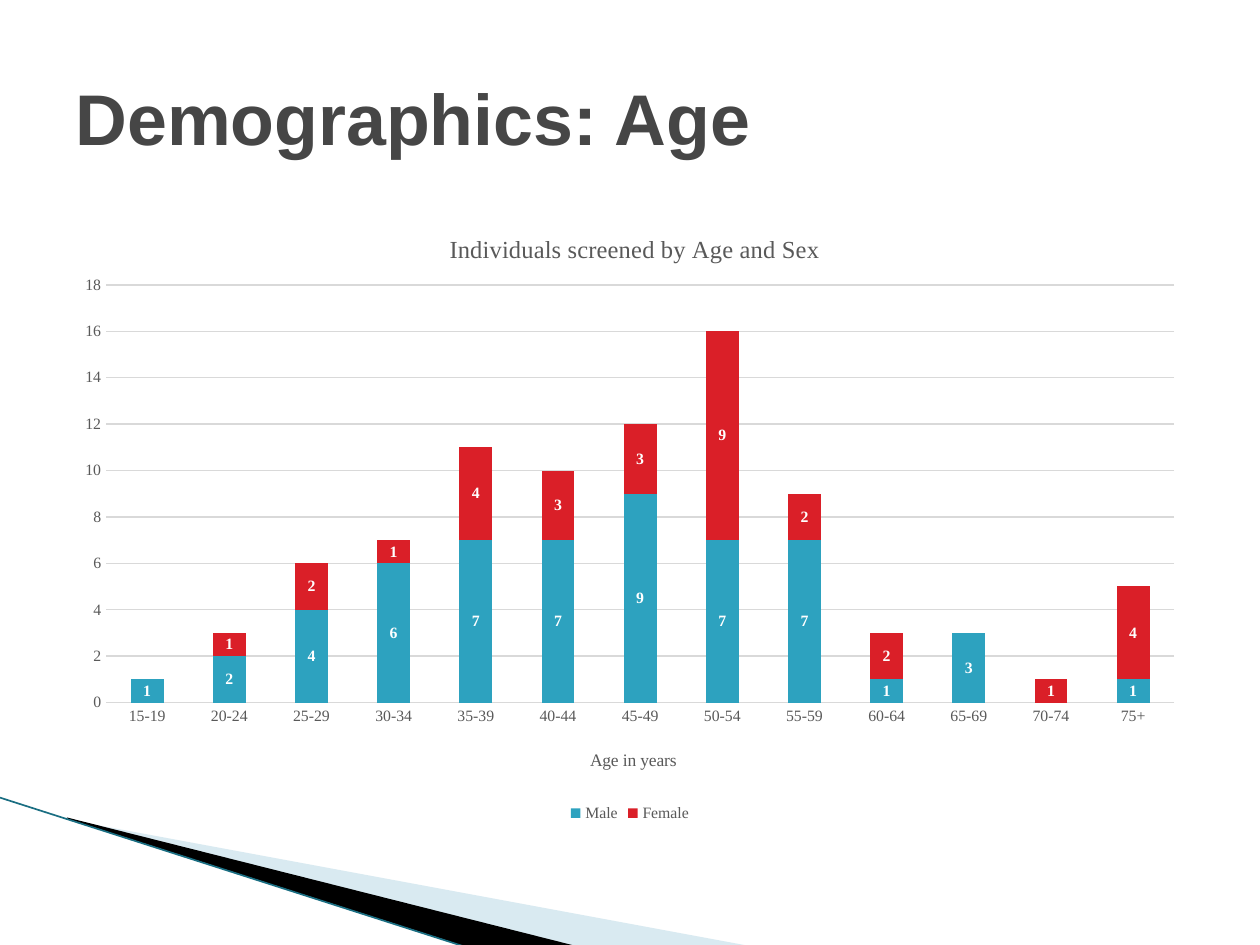
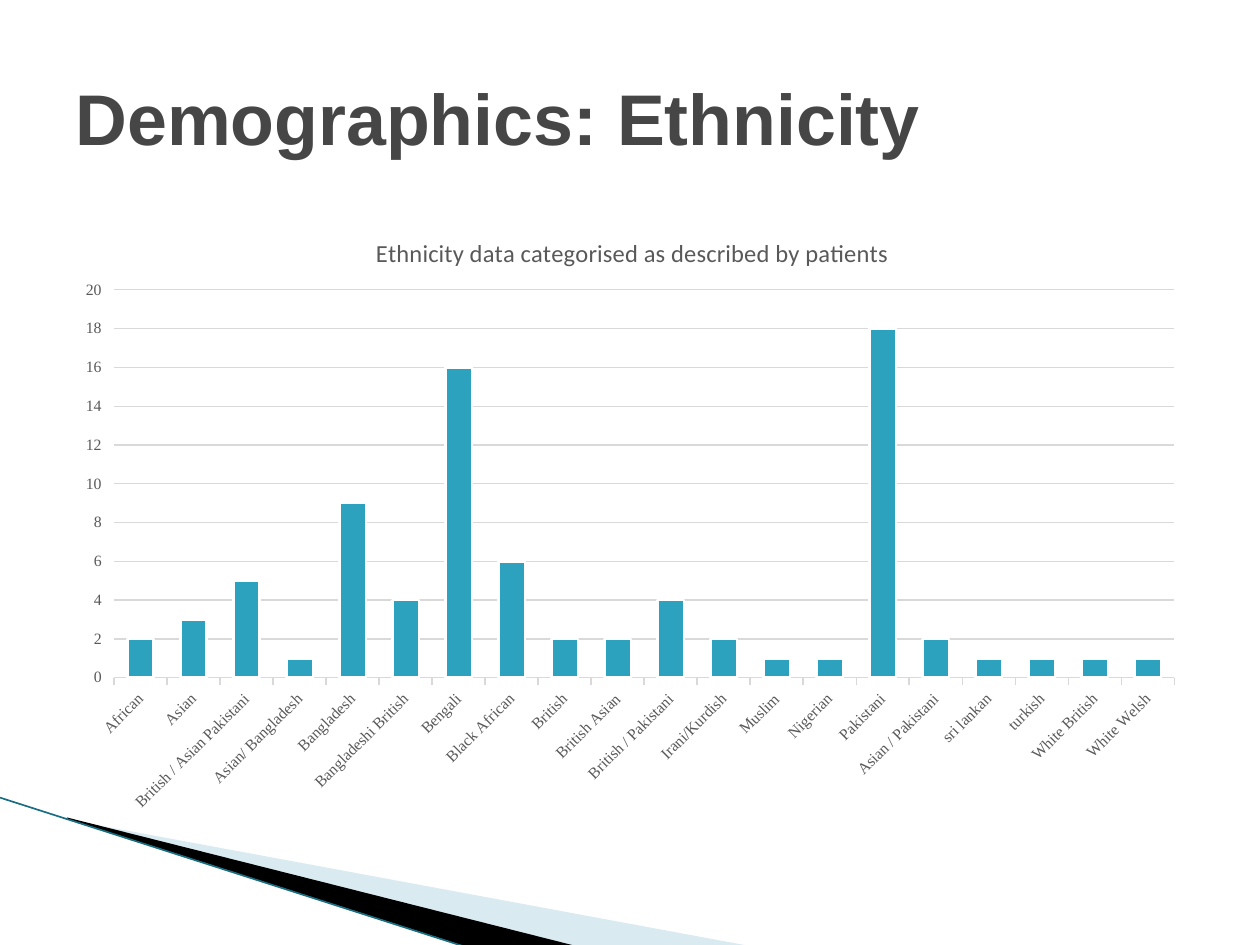
from lxml import etree
from pptx import Presentation
from pptx.chart.data import CategoryChartData
from pptx.dml.color import RGBColor
from pptx.enum.chart import XL_CHART_TYPE, XL_LABEL_POSITION, XL_LEGEND_POSITION, XL_TICK_MARK
from pptx.enum.shapes import MSO_CONNECTOR
from pptx.enum.text import MSO_ANCHOR
from pptx.oxml.ns import qn
from pptx.util import Cm, Pt

STACKED = XL_CHART_TYPE.COLUMN_STACKED
CLUSTERED = XL_CHART_TYPE.COLUMN_CLUSTERED
LABEL_CENTER = XL_LABEL_POSITION.CENTER
LEGEND_BOTTOM = XL_LEGEND_POSITION.BOTTOM
TICK_NONE, TICK_OUTSIDE = XL_TICK_MARK.NONE, XL_TICK_MARK.OUTSIDE
STRAIGHT = MSO_CONNECTOR.STRAIGHT
MIDDLE = MSO_ANCHOR.MIDDLE

# Shared colours and text formats
WHITE = RGBColor(0xFF, 0xFF, 0xFF)
BLACK = RGBColor(0x00, 0x00, 0x00)
TITLE_GREY = RGBColor(0x46, 0x46, 0x46)
TEXT_GREY = RGBColor(0x59, 0x59, 0x59)
GRID_GREY = RGBColor(0xD9, 0xD9, 0xD9)
TEAL = RGBColor(0x2D, 0xA2, 0xBF)
DARK_TEAL = RGBColor(0x1A, 0x6E, 0x82)
PALE_TEAL = RGBColor(0xA0, 0xCB, 0xDC)
RED = RGBColor(0xDA, 0x1F, 0x28)

SERIF = "Times New Roman"
SLIDE_TITLE = {"name": "Arial", "size": Pt(41), "bold": True, "color": TITLE_GREY}
CHART_BASE = {"name": SERIF, "size": Pt(10), "color": BLACK}
AXIS_TEXT = {"name": SERIF, "size": Pt(9), "bold": False, "color": TEXT_GREY}
AXIS_TITLE = AXIS_TEXT | {"size": Pt(10)}
CHART_TITLE = AXIS_TEXT | {"size": Pt(14)}
DATA_LABEL = AXIS_TEXT | {"bold": True, "color": WHITE}

# Corner wedges: colour, opacity in percent, corners in cm
WEDGES = [
    (PALE_TEAL, 40, [(1.4, 16.53), (15.11, 19.07), (11.58, 19.07), (1.4, 16.51)]),
    (BLACK, 100, [(1.35, 16.48), (11.61, 19.07), (9.45, 19.1), (1.37, 16.51)]),
]

# Layout values are fractions of the chart area
SLIDES = [
    {
        "title": "Demographics: Age",
        "type": STACKED,
        "chart_title": "Individuals screened by Age and Sex",
        "title_format": CHART_TITLE,
        "title_place": {"x": 0.337, "y": 0.04},
        "plot_place": {"x": 0.038, "y": 0.13, "w": 0.942, "h": 0.67},
        "categories": [f"{age}-{age + 4}" for age in range(15, 75, 5)] + ["75+"],
        "series": [
            ("Male", TEAL, [1, 2, 4, 6, 7, 7, 9, 7, 7, 1, 3, 0, 1]),
            ("Female", RED, [0, 1, 2, 1, 4, 3, 3, 9, 2, 2, 0, 1, 4]),
        ],
        "maximum": 18,
        "gap": 150,
        "tick": TICK_NONE,
    },
    {
        "title": "Demographics: Ethnicity",
        "type": CLUSTERED,
        "chart_title": "Ethnicity data categorised as described by patients",
        "title_format": CHART_TITLE | {"name": "Calibri"},
        "title_place": {"x": 0.272, "y": 0.045},
        "plot_place": {"x": 0.045, "y": 0.138, "w": 0.935, "h": 0.622},
        "categories": [
            "African", "Asian", "British / Asian Pakistani", "Asian/ Bangladesh",
            "Bangladesh", "Bangladeshi British", "Bengali", "Black African",
            "British", "British Asian", "British / Pakistani", "Irani/Kurdish",
            "Muslim", "Nigerian", "Pakistani", "Asian / Pakistani",
            "sri lankan", "turkish", "White British", "White Welsh",
        ],
        "series": [
            ("Series 1", TEAL, [2, 3, 5, 1, 9, 4, 16, 6, 2, 2, 4, 2, 1, 1, 18, 2, 1, 1, 1, 1]),
        ],
        "maximum": 20,
        "gap": 100,
        "tick": TICK_OUTSIDE,
    },
]


def format_font(font, values):
    for name, value in values.items():
        if name == "color":
            font.color.rgb = value
        else:
            setattr(font, name, value)


def place(element, position, fractions):
    """Give a chart part a manual layout, as child number `position`."""
    for old_layout in element.findall(qn("c:layout")):
        element.remove(old_layout)
    layout = etree.Element(qn("c:layout"))
    manual = etree.SubElement(layout, qn("c:manualLayout"))
    if "w" in fractions:
        etree.SubElement(manual, qn("c:layoutTarget"), val="inner")
    for axis in "xy":
        etree.SubElement(manual, qn(f"c:{axis}Mode"), val="edge")
    for name, value in fractions.items():
        etree.SubElement(manual, qn(f"c:{name}"), val=str(value))
    element.insert(position, layout)


presentation = Presentation()
presentation.slide_width, presentation.slide_height = Cm(25.4), Cm(19.05)
blank_layout = presentation.slide_layouts[6]

for content in SLIDES:
    slide = presentation.slides.add_slide(blank_layout)

    # Corner decoration
    for color, opacity, corners in WEDGES:
        points = [(Cm(x), Cm(y)) for x, y in corners]
        builder = slide.shapes.build_freeform(*points[0])
        builder.add_line_segments(points[1:])
        wedge = builder.convert_to_shape()
        wedge.shadow.inherit = False
        wedge.fill.solid()
        wedge.fill.fore_color.rgb = color
        wedge.line.fill.background()
        if opacity < 100:
            color_element = wedge._element.spPr.find(f".//{qn('a:srgbClr')}")
            etree.SubElement(color_element, qn("a:alpha"), val=str(opacity * 1000))
    edge = slide.shapes.add_connector(STRAIGHT, Cm(0), Cm(16.08), Cm(9.42), Cm(19.1))
    edge.line.color.rgb = DARK_TEAL
    edge.line.width = Pt(0.95)
    etree.SubElement(edge._element.spPr, qn("a:effectLst"))

    # Slide title
    title_box = slide.shapes.add_textbox(Cm(1.27), Cm(0.76), Cm(22.86), Cm(3.18))
    title_frame = title_box.text_frame
    title_frame.word_wrap = True
    title_frame.vertical_anchor = MIDDLE
    title_frame.text = content["title"]
    format_font(title_frame.paragraphs[0].runs[0].font, SLIDE_TITLE)

    # Chart with its title
    chart_data = CategoryChartData()
    chart_data.categories = content["categories"]
    for name, color, values in content["series"]:
        chart_data.add_series(name, values)
    chart = slide.shapes.add_chart(
        content["type"], Cm(1.27), Cm(4.11), Cm(22.86), Cm(12.57), chart_data
    ).chart
    format_font(chart.font, CHART_BASE)
    chart.has_title = True
    chart.chart_title.include_in_layout = False
    chart.chart_title.text_frame.text = content["chart_title"]
    chart_title_run = chart.chart_title.text_frame.paragraphs[0].runs[0]
    format_font(chart_title_run.font, content["title_format"])
    place(chart.chart_title._element, 1, content["title_place"])
    place(chart._chartSpace.find(f".//{qn('c:plotArea')}"), 0, content["plot_place"])

    # Axes
    category_axis, value_axis = chart.category_axis, chart.value_axis
    for axis in (category_axis, value_axis):
        axis.major_tick_mark = content["tick"]
        axis.minor_tick_mark = TICK_NONE
        format_font(axis.tick_labels.font, AXIS_TEXT)
    value_axis.minimum_scale = 0
    value_axis.maximum_scale = content["maximum"]
    value_axis.major_unit = 2
    value_axis.format.line.fill.background()
    value_axis.has_major_gridlines = True
    for line in (category_axis.format.line, value_axis.major_gridlines.format.line):
        line.color.rgb = GRID_GREY
        line.width = Pt(0.75)

    # Columns
    plot = chart.plots[0]
    plot.vary_by_categories = False
    plot.gap_width = content["gap"]
    for series, (name, color, values) in zip(plot.series, content["series"]):
        series.format.fill.solid()
        series.format.fill.fore_color.rgb = color

    if content["type"] == STACKED:
        # Data labels, hidden for zero
        plot.overlap = 100
        for series in plot.series:
            labels = series.data_labels
            labels.show_value = True
            labels.position = LABEL_CENTER
            labels.number_format = "0;;;"
            labels.number_format_is_linked = False
            format_font(labels.font, DATA_LABEL)

        # Axis title and legend
        axis_title = category_axis.axis_title
        axis_title.text_frame.text = "Age in years"
        format_font(axis_title.text_frame.paragraphs[0].runs[0].font, AXIS_TITLE)
        place(axis_title._element, 1, {"x": 0.462, "y": 0.868})
        chart.has_legend = True
        chart.legend.position = LEGEND_BOTTOM
        chart.legend.include_in_layout = False
        format_font(chart.legend.font, AXIS_TEXT)
    else:
        # White column outlines and slanted category names
        chart.has_legend = False
        outline = plot.series[0].format.line
        outline.color.rgb = WHITE
        outline.width = Pt(1.5)
        label_body = category_axis._element.find(f"{qn('c:txPr')}/{qn('a:bodyPr')}")
        label_body.set("rot", str(-45 * 60000))

presentation.save("out.pptx")
